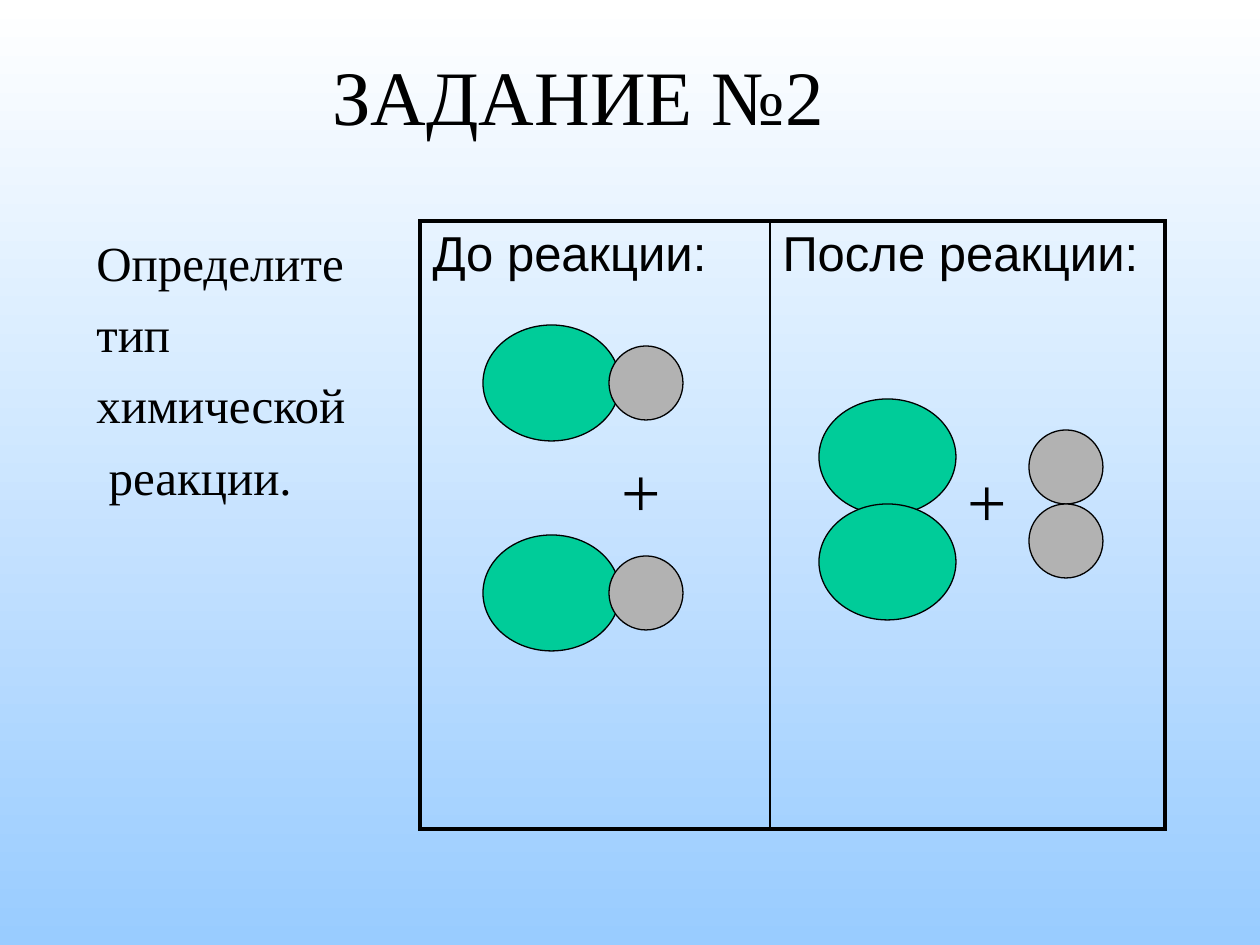
from lxml import etree
from pptx import Presentation, util as u
from pptx.dml.color import RGBColor
from pptx.enum import shapes, text
from pptx.oxml.ns import qn

SCALE = 914400 / 126  # EMU in one px
SERIF, SANS = "Times New Roman", "Arial"
BLACK, GREEN, GRAY = "000000", "00CC99", "B2B2B2"
BIG, SMALL = (137, 116), (74, 74)  # atom sizes


def px(length):
    return u.Emu(round(length * SCALE))


def color(value):
    return RGBColor.from_string(value)


def set_background(page):
    fill = page.background.fill
    fill.gradient()
    fill.gradient_angle = 270
    for stop, value in zip(fill.gradient_stops, ("FFFFFF", "99CCFF")):
        stop.color.rgb = color(value)


def format_text(frame, size, font):
    for para in frame.paragraphs:
        for span in para.runs:
            span.font.size = u.Pt(size)
            span.font.name = font
            span.font.color.rgb = color(BLACK)


def add_text(page, left, top, width, height, words, size):
    box = page.shapes.add_textbox(px(left), px(top), px(width), px(height))
    frame = box.text_frame
    frame.word_wrap = True
    frame.text = words
    format_text(frame, size, SERIF)
    return frame


def add_molecule(page, *atoms):
    """Group atoms, each given as left, top, size and fill."""
    group = page.shapes.add_group_shape()
    for left, top, (width, height), fill in atoms:
        atom = group.shapes.add_shape(shapes.MSO_SHAPE.OVAL, px(left), px(top),
                                      px(width), px(height))
        atom.shadow.inherit = False
        atom.fill.solid()
        atom.fill.fore_color.rgb = color(fill)
        atom.line.color.rgb = color(BLACK)
        atom.line.width = u.Pt(0.75)


def set_borders(cell, **widths):
    properties = cell._tc.get_or_add_tcPr()
    for place, side in enumerate(("L", "R", "T", "B")):
        line = etree.Element(qn(f"a:ln{side}"), w=str(u.Pt(widths[side])))
        fill = etree.SubElement(line, qn("a:solidFill"))
        etree.SubElement(fill, qn("a:srgbClr"), val=BLACK)
        properties.insert(place, line)


def add_reaction_table(page):
    widths = (350, 395)
    table = page.shapes.add_table(1, 2, px(420), px(221), px(sum(widths)),
                                  px(608)).table
    table.first_row = table.horz_banding = False
    headings = ("До реакции:", "После реакции:")
    for index, (width, heading) in enumerate(zip(widths, headings)):
        table.columns[index].width = px(width)
        cell = table.cell(0, index)
        cell.text = heading
        format_text(cell.text_frame, 28, SANS)
        cell.fill.background()
        set_borders(cell, T=2.25, B=2.25, L=1 if index else 2.25,
                    R=2.25 if index else 1)


def main():
    deck = Presentation()
    deck.slide_width, deck.slide_height = px(1260), px(945)
    page = deck.slides.add_slide(deck.slide_layouts[6])
    set_background(page)

    # Title and task
    title = add_text(page, 26, 32, 1105, 126, "ЗАДАНИЕ №2", 44)
    title.vertical_anchor = text.MSO_ANCHOR.MIDDLE
    title.paragraphs[0].alignment = text.PP_ALIGN.CENTER
    task = add_text(page, 84, 221, 536, 608,
                    "Определите\nтип\nхимической\n реакции.", 28)
    task.margin_top = px(11)
    for para in task.paragraphs:
        para.space_after = u.Pt(7.2)

    add_reaction_table(page)

    # Before the reaction: two mixed molecules
    for top in (325, 535):
        add_molecule(page, (483, top, BIG, GREEN),
                     (609, top + 21, SMALL, GRAY))

    # After the reaction: one molecule of each kind
    add_molecule(page, (819, 399, BIG, GREEN), (819, 504, BIG, GREEN))
    add_molecule(page, (1029, 430, SMALL, GRAY), (1029, 504, SMALL, GRAY))

    # Plus signs
    for left, top in ((609, 441), (955, 451)):
        add_text(page, left, top, 84, 97, "+", 40)

    deck.save("out.pptx")


if __name__ == "__main__":
    main()
